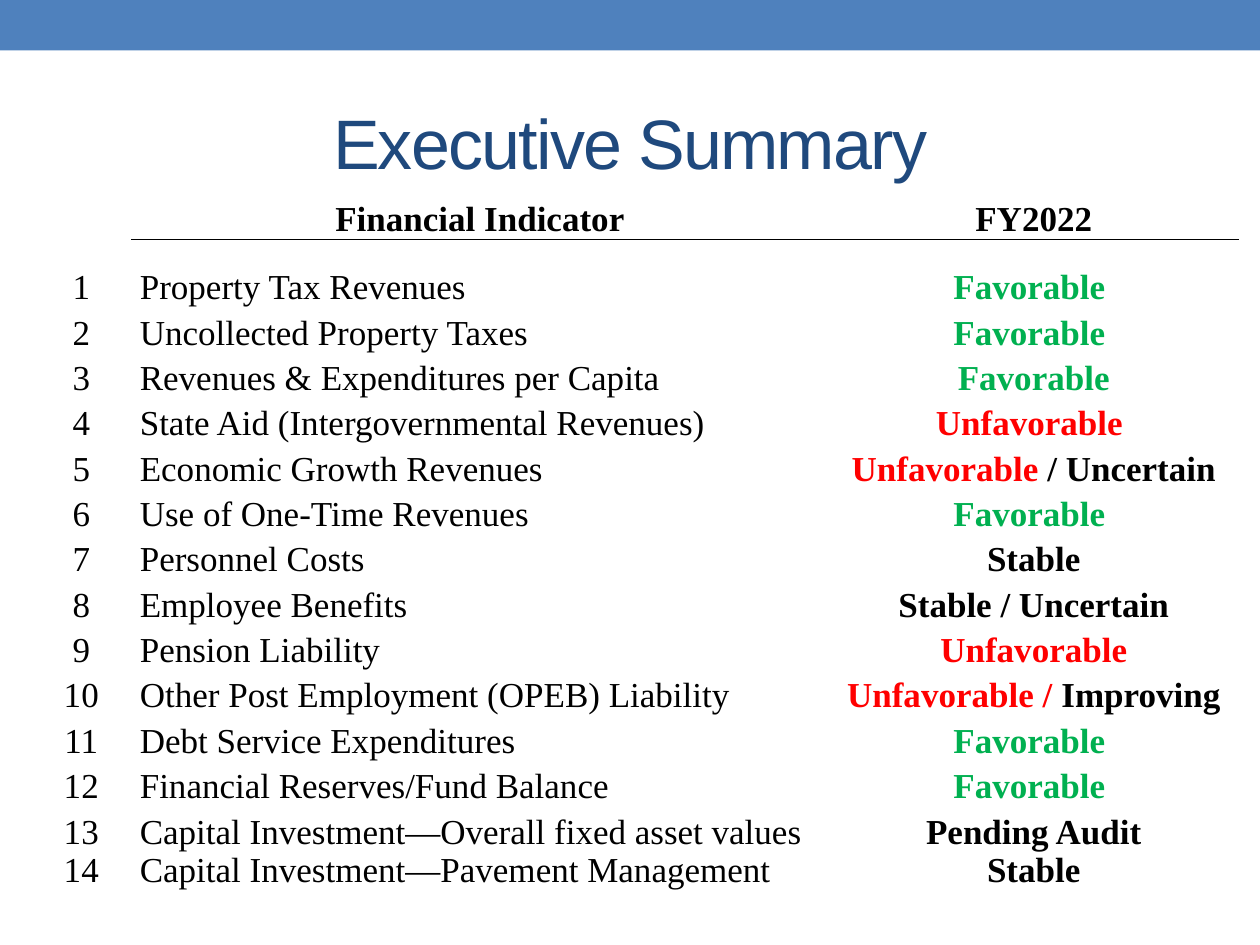
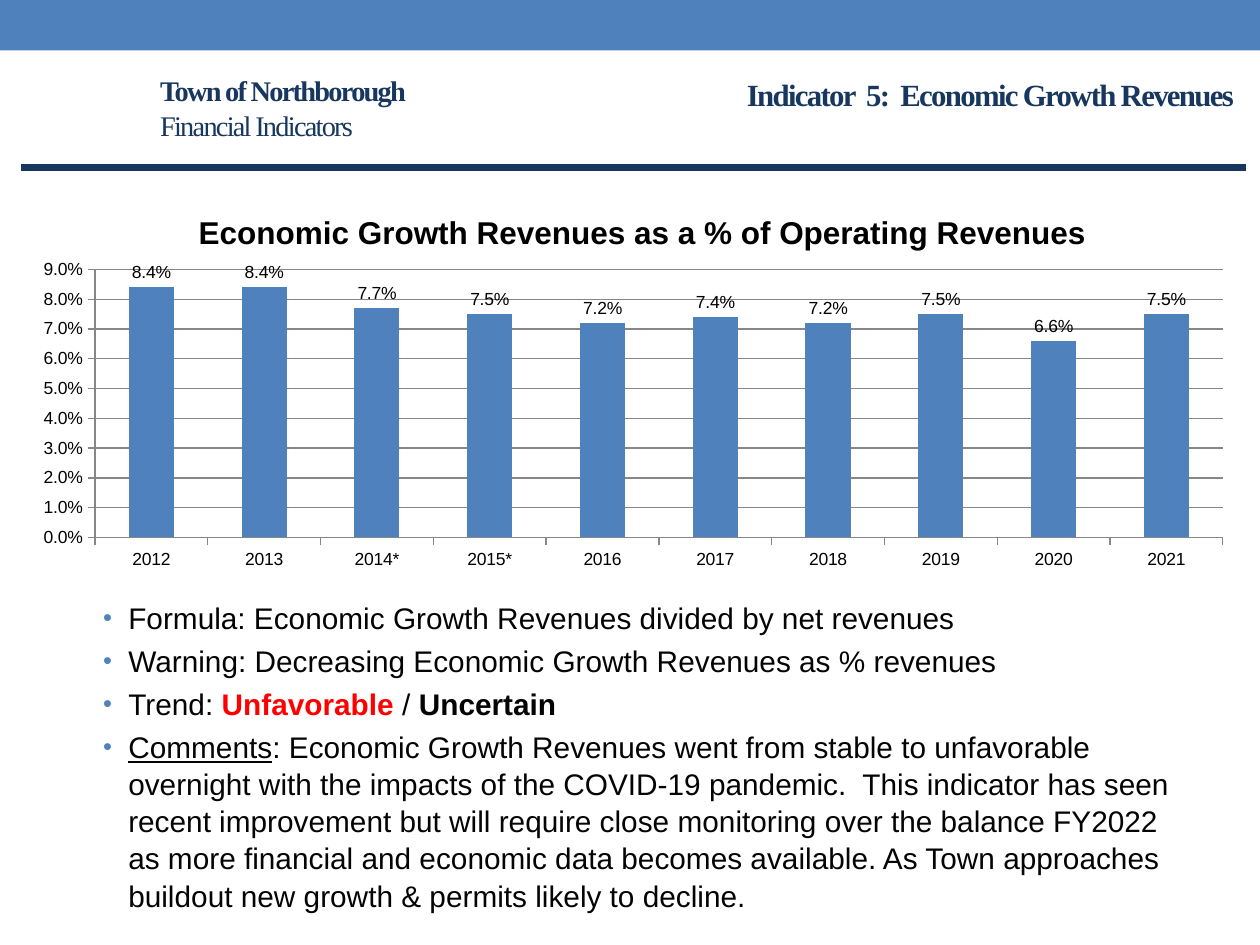
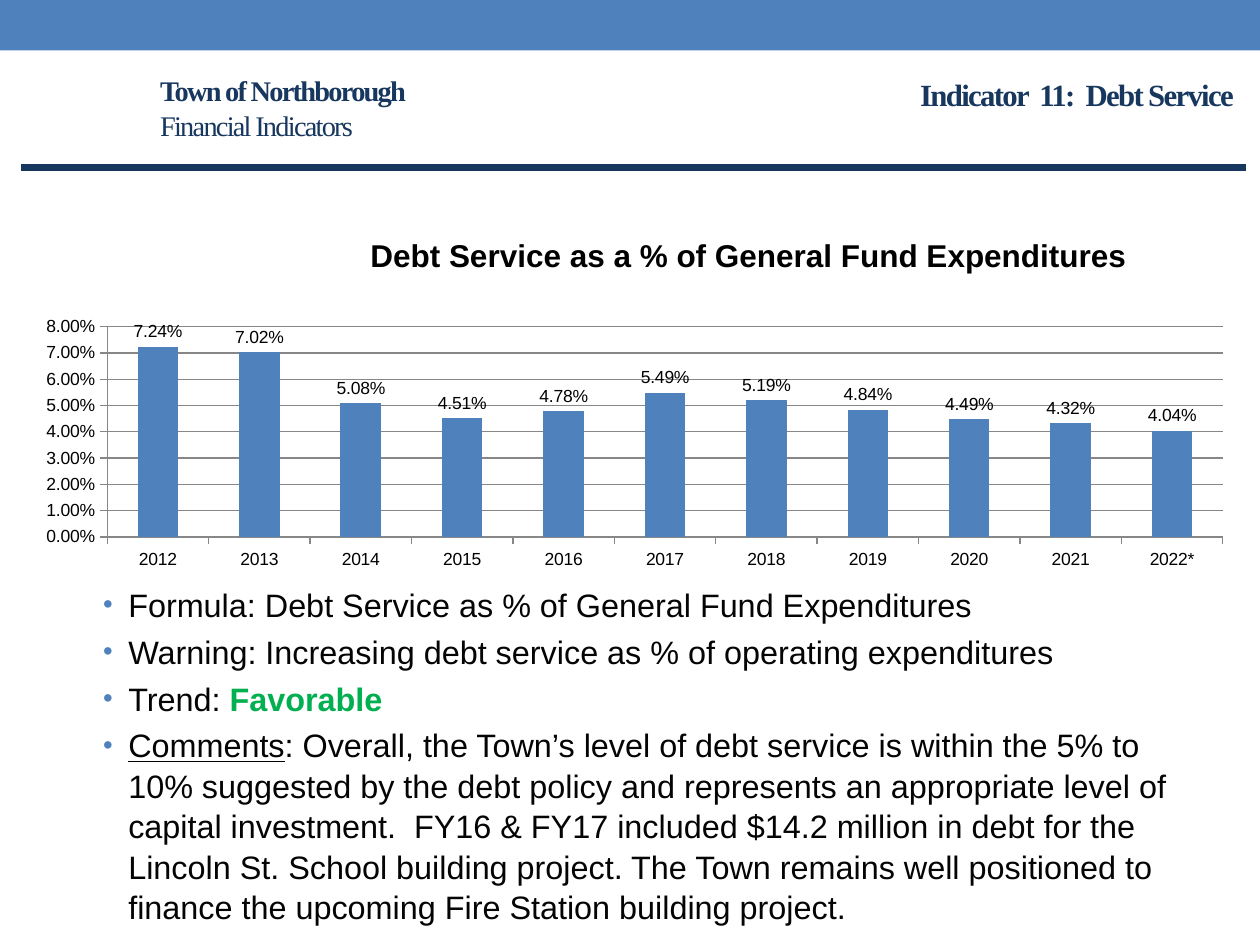
from dataclasses import dataclass

import pptx
import pptx.chart.data
import pptx.dml.color
import pptx.enum.chart
import pptx.enum.shapes
import pptx.enum.text
import pptx.oxml
import pptx.oxml.ns
import pptx.util
from lxml import etree

Inches = pptx.util.Inches
Pt = pptx.util.Pt
qn = pptx.oxml.ns.qn
ALIGN = pptx.enum.text.PP_ALIGN
ANCHOR = pptx.enum.text.MSO_ANCHOR


def rgb(value):
    return pptx.dml.color.RGBColor.from_string(value)


@dataclass(frozen=True)
class Theme:
    sans: str = "Arial"
    serif: str = "Times New Roman"
    accent: str = "4F81BD"
    title: str = "1F497D"
    navy: str = "17375E"
    ink: str = "040404"
    black: str = "000000"
    good: str = "00B050"
    bad: str = "FF0000"
    grid: str = "878787"
    title_size: float = 40
    table_size: float = 20
    town_size: float = 16.2
    indicator_size: float = 17.6
    chart_title_size: float = 18
    chart_size: float = 10
    tight: int = -100
    line_spacing: float = 1.04


THEME = Theme()

# Run styles used by ratings and bullets
STYLES = {
    "plain": {},
    "good": {"color": THEME.good, "bold": True},
    "bad": {"color": THEME.bad, "bold": True},
    "strong": {"bold": True},
    "under": {"underline": True},
}

# Content
INDICATORS = [
    ("Property Tax Revenues", [("Favorable ", "good")]),
    ("Uncollected Property Taxes", [("Favorable ", "good")]),
    ("Revenues & Expenditures per Capita", [("Favorable", "good")]),
    ("State Aid (Intergovernmental Revenues)", [("Unfavorable ", "bad")]),
    ("Economic Growth Revenues", [("Unfavorable", "bad"), (" / Uncertain", "strong")]),
    ("Use of One-Time Revenues", [("Favorable ", "good")]),
    ("Personnel Costs", [("Stable", "strong")]),
    ("Employee Benefits", [("Stable / Uncertain", "strong")]),
    ("Pension Liability", [("Unfavorable", "bad")]),
    ("Other Post Employment (OPEB) Liability",
     [("Unfavorable / ", "bad"), ("Improving", "strong")]),
    ("Debt Service Expenditures", [("Favorable ", "good")]),
    ("Financial Reserves/Fund Balance", [("Favorable ", "good")]),
    ("Capital Investment—Overall fixed asset values", [("Pending Audit", "strong")]),
    ("Capital Investment—Pavement Management", [("Stable", "strong")]),
]

GROWTH = {
    "heading": "Indicator  5:  Economic Growth Revenues",
    "chart": {
        "box": (0.17, 1.45, 9.73, 3.13),
        "title": "Economic Growth Revenues as a % of Operating Revenues",
        "title_at": (0.14, 0.06),
        "plot": (0.06, 0.22, 0.92, 0.68),
        "series": "Economic Growth Revenues as a % of Operating Revenues",
        "years": ["2012", "2013", "2014*", "2015*", "2016",
                  "2017", "2018", "2019", "2020", "2021"],
        "values": [0.084, 0.084, 0.077, 0.075, 0.072, 0.074, 0.072, 0.075, 0.066, 0.075],
        "format": "0.0%",
        "maximum": 0.09,
    },
    "notes_box": (0.42, 4.7, 9, 2.47),
    "notes_size": 17,
    "notes": [
        [("Formula: Economic Growth Revenues divided by net revenues", "plain")],
        [("Warning: Decreasing Economic Growth Revenues as % revenues", "plain")],
        [("Trend: ", "plain"), ("Unfavorable", "bad"), (" / ", "plain"),
         ("Uncertain", "strong")],
        [("Comments", "under"),
         (": Economic Growth Revenues went from stable to unfavorable overnight with the "
          "impacts of the COVID-19 pandemic.  This indicator has seen recent improvement but "
          "will require close monitoring over the balance FY2022 as more financial and "
          "economic data becomes available. As Town approaches buildout new growth & permits "
          "likely to decline.", "plain")],
    ],
}

DEBT = {
    "heading": "Indicator  11:  Debt Service",
    "chart": {
        "box": (0.17, 1.7, 9.73, 2.88),
        "title": "Debt Service as a % of General Fund Expenditures",
        "title_at": (0.28, 0.04),
        "plot": (0.07, 0.31, 0.91, 0.58),
        "series": "Series 1",
        "years": [str(year) for year in range(2012, 2022)] + ["2022*"],
        "values": [0.0724, 0.0702, 0.0508, 0.0451, 0.0478, 0.0549,
                   0.0519, 0.0484, 0.0449, 0.0432, 0.0404],
        "format": "0.00%",
        "maximum": 0.08,
    },
    "notes_box": (0.42, 4.58, 9, 2.42),
    "notes_size": 18.5,
    "notes": [
        [("Formula: Debt Service as % of General Fund Expenditures", "plain")],
        [("Warning: Increasing debt service as % of operating expenditures", "plain")],
        [("Trend: ", "plain"), ("Favorable", "good")],
        [("Comments", "under"),
         (": Overall, the Town’s level of debt service is within the 5% to 10% suggested by "
          "the debt policy and represents an appropriate level of capital investment.  FY16 & "
          "FY17 included $14.2 million in debt for the Lincoln St. School building project. "
          "The Town remains well positioned to finance the upcoming Fire Station building "
          "project.", "plain")],
    ],
}


# Shared helpers
def assign(target, values):
    for name, value in values.items():
        setattr(target, name, value)


def inches(box):
    return [Inches(length) for length in box]


def format_font(font, face, size, color, **extra):
    assign(font, {"name": face, "size": Pt(size), **extra})
    font.color.rgb = rgb(color)


def write(frame, paragraphs, face, size, color, align=ALIGN.LEFT, spc=None, **layout):
    """Fill a text frame; each paragraph is a list of (text, style name)."""
    for index, runs in enumerate(paragraphs):
        paragraph = frame.paragraphs[0] if index == 0 else frame.add_paragraph()
        assign(paragraph, {"alignment": align, **layout})
        for text, style in runs:
            run = paragraph.add_run()
            run.text = text
            look = {"color": color, "bold": False, **STYLES[style]}
            format_font(run.font, face, size, **look)
            if spc is not None:
                run.font._element.set("spc", str(spc))


def place_title(slide, box, paragraphs, **text):
    title = slide.shapes.title
    assign(title, dict(zip(("left", "top", "width", "height"), inches(box))))
    assign(title.text_frame, {"auto_size": pptx.enum.text.MSO_AUTO_SIZE.NONE,
                              "vertical_anchor": ANCHOR.MIDDLE, "word_wrap": True})
    write(title.text_frame, paragraphs, spc=THEME.tight, **text)


def add_text(slide, box, anchor=ANCHOR.TOP):
    frame = slide.shapes.add_textbox(*inches(box)).text_frame
    assign(frame, {"word_wrap": True, "vertical_anchor": anchor})
    return frame


def add_master_band(prs, slide):
    """Draw the top band and move it to the master, behind every slide."""
    band = slide.shapes.add_shape(pptx.enum.shapes.MSO_SHAPE.RECTANGLE,
                                  0, 0, prs.slide_width, Inches(0.4))
    band.shadow.inherit = False
    band.fill.solid()
    band.fill.fore_color.rgb = rgb(THEME.accent)
    band.line.fill.background()
    band.element.nvSpPr.cNvPr.set("id", "100")
    prs.slide_master.shapes.element.insert(2, band.element)


# Summary table
def format_cell(cell, paragraphs, align=ALIGN.CENTER):
    assign(cell, {"margin_left": Inches(0.07), "margin_right": Inches(0.07),
                  "margin_top": 0, "margin_bottom": 0, "vertical_anchor": ANCHOR.BOTTOM})
    cell.fill.background()
    if paragraphs:
        write(cell.text_frame, paragraphs, THEME.serif, THEME.table_size, THEME.black, align)
    else:
        etree.SubElement(cell.text_frame.paragraphs[0]._p, qn("a:endParaRPr"), sz="800")


def underline_cell(cell):
    border = etree.Element(qn("a:lnB"), w=str(Pt(1)))
    fill = etree.SubElement(border, qn("a:solidFill"))
    etree.SubElement(fill, qn("a:srgbClr"), val=THEME.black)
    cell._tc.get_or_add_tcPr().insert(0, border)


def add_summary_table(slide, box):
    numbered = [([(str(number), "plain")], [(name, "plain")], rating)
                for number, (name, rating) in enumerate(INDICATORS, 1)]
    # The two capital investment lines share the last row
    groups = [[entry] for entry in numbered[:-2]] + [numbered[-2:]]
    header = [[], [[("Financial Indicator", "strong")]], [[("FY2022", "strong")]]]
    rows = [header, [[], [], []]] + [list(zip(*group)) for group in groups]
    heights = [0.48, 0.18] + [0.36] * (len(groups) - 1) + [0.67]

    table = slide.shapes.add_table(len(rows), 3, *inches(box)).table
    assign(table, {"first_row": False, "horz_banding": False})
    no_style = "{2D5ABB26-0587-4C30-8999-92F81FD0307C}"
    table._tbl.tblPr.find(qn("a:tableStyleId")).text = no_style
    for column, width in zip(table.columns, (0.79, 5.54, 3.25)):
        column.width = Inches(width)
    for r, (row, height) in enumerate(zip(rows, heights)):
        table.rows[r].height = Inches(height)
        for c, paragraphs in enumerate(row):
            is_name = c == 1 and r > 0
            format_cell(table.cell(r, c), paragraphs, ALIGN.LEFT if is_name else ALIGN.CENTER)
    for c in (1, 2):
        underline_cell(table.cell(0, c))


# Indicator chart
def set_layout(parent, index, **values):
    """Give a chart part a manual layout in fractions of the chart."""
    for old in parent.findall(qn("c:layout")):
        parent.remove(old)
    layout = etree.Element(qn("c:layout"))
    manual = etree.SubElement(layout, qn("c:manualLayout"))
    for name, value in values.items():
        etree.SubElement(manual, qn("c:" + name), val=str(value))
    parent.insert(index, layout)


def add_indicator_chart(slide, info):
    data = pptx.chart.data.CategoryChartData(number_format=info["format"])
    data.categories = info["years"]
    data.add_series(info["series"], info["values"])
    chart = slide.shapes.add_chart(pptx.enum.chart.XL_CHART_TYPE.COLUMN_CLUSTERED,
                                   *inches(info["box"]), data).chart
    assign(chart, {"has_legend": False, "has_title": True})
    format_font(chart.font, THEME.sans, THEME.chart_size, THEME.black)

    title = chart.chart_title
    write(title.text_frame, [[(info["title"], "strong")]], THEME.sans,
          THEME.chart_title_size, THEME.black, ALIGN.CENTER)
    x, y = info["title_at"]
    set_layout(title._element, 1, xMode="edge", yMode="edge", x=x, y=y)
    x, y, w, h = info["plot"]
    set_layout(chart._chartSpace.chart.plotArea, 0, layoutTarget="inner",
               xMode="edge", yMode="edge", x=x, y=y, w=w, h=h)

    # Axes and gridlines
    outside = pptx.enum.chart.XL_TICK_MARK.OUTSIDE
    assign(chart.value_axis, {"minimum_scale": 0, "maximum_scale": info["maximum"],
                              "major_unit": 0.01, "has_major_gridlines": True})
    assign(chart.value_axis.tick_labels, {"number_format": info["format"],
                                          "number_format_is_linked": False})
    for axis in (chart.category_axis, chart.value_axis):
        axis.major_tick_mark = outside
    for part in (chart.category_axis, chart.value_axis, chart.value_axis.major_gridlines):
        part.format.line.color.rgb = rgb(THEME.grid)
        part.format.line.width = Pt(0.75)

    # Columns and their labels
    plot = chart.plots[0]
    assign(plot, {"gap_width": 150, "vary_by_categories": False, "has_data_labels": True})
    assign(plot.data_labels, {
        "show_value": True, "number_format": info["format"], "number_format_is_linked": False,
        "position": pptx.enum.chart.XL_LABEL_POSITION.OUTSIDE_END})
    fill = plot.series[0].format.fill
    fill.solid()
    fill.fore_color.rgb = rgb(THEME.accent)


# Indicator header and notes
def add_header(slide, heading):
    place_title(slide, (1.17, 0.56, 2.2, 0.58),
                [[("Town of Northborough", "strong")], [("Financial Indicators", "plain")]],
                face=THEME.serif, size=THEME.town_size, color=THEME.navy,
                line_spacing=THEME.line_spacing)
    write(add_text(slide, (5.03, 0.42, 4.86, 0.66), ANCHOR.MIDDLE), [[(heading, "strong")]],
          THEME.serif, THEME.indicator_size, THEME.navy, ALIGN.RIGHT, THEME.tight)
    rule = slide.shapes.add_connector(pptx.enum.shapes.MSO_CONNECTOR.STRAIGHT,
                                      *inches((0.17, 1.33, 9.89, 1.33)))
    rule.line.color.rgb = rgb(THEME.navy)
    rule.line.width = Pt(4.25)
    etree.SubElement(rule.element.spPr, qn("a:effectLst"))


def add_notes_list(slide, box, notes, size):
    frame = add_text(slide, box)
    write(frame, notes, THEME.sans, size, THEME.ink,
          space_before=Pt(0.2 * size), line_spacing=THEME.line_spacing)
    for paragraph in frame.paragraphs:
        properties = paragraph._p.get_or_add_pPr()
        assign_xml = {"marL": Inches(0.5), "indent": Inches(-0.2)}
        for name, value in assign_xml.items():
            properties.set(name, str(value))
        color = etree.SubElement(properties, qn("a:buClr"))
        etree.SubElement(color, qn("a:srgbClr"), val=THEME.accent)
        etree.SubElement(properties, qn("a:buSzPct"), val="85000")
        etree.SubElement(properties, qn("a:buFont"), typeface=THEME.sans)
        etree.SubElement(properties, qn("a:buChar"), char="•")


# Slide types
def build_summary(slide):
    place_title(slide, (0.5, 0.58, 9, 1.08), [[("Executive Summary", "plain")]],
                face=THEME.sans, size=THEME.title_size, color=THEME.title,
                align=ALIGN.CENTER)
    add_summary_table(slide, (0.25, 1.42, 9.58, 5.67))


def build_indicator(slide, content):
    add_header(slide, content["heading"])
    add_notes_list(slide, content["notes_box"], content["notes"], content["notes_size"])
    add_indicator_chart(slide, content["chart"])


def main():
    prs = pptx.Presentation()
    assign(prs, {"slide_width": Inches(10), "slide_height": Inches(7.5)})
    title_only = prs.slide_layouts[5]
    summary = prs.slides.add_slide(title_only)
    add_master_band(prs, summary)
    build_summary(summary)
    for content in (GROWTH, DEBT):
        build_indicator(prs.slides.add_slide(title_only), content)
    prs.save("out.pptx")


if __name__ == "__main__":
    main()
